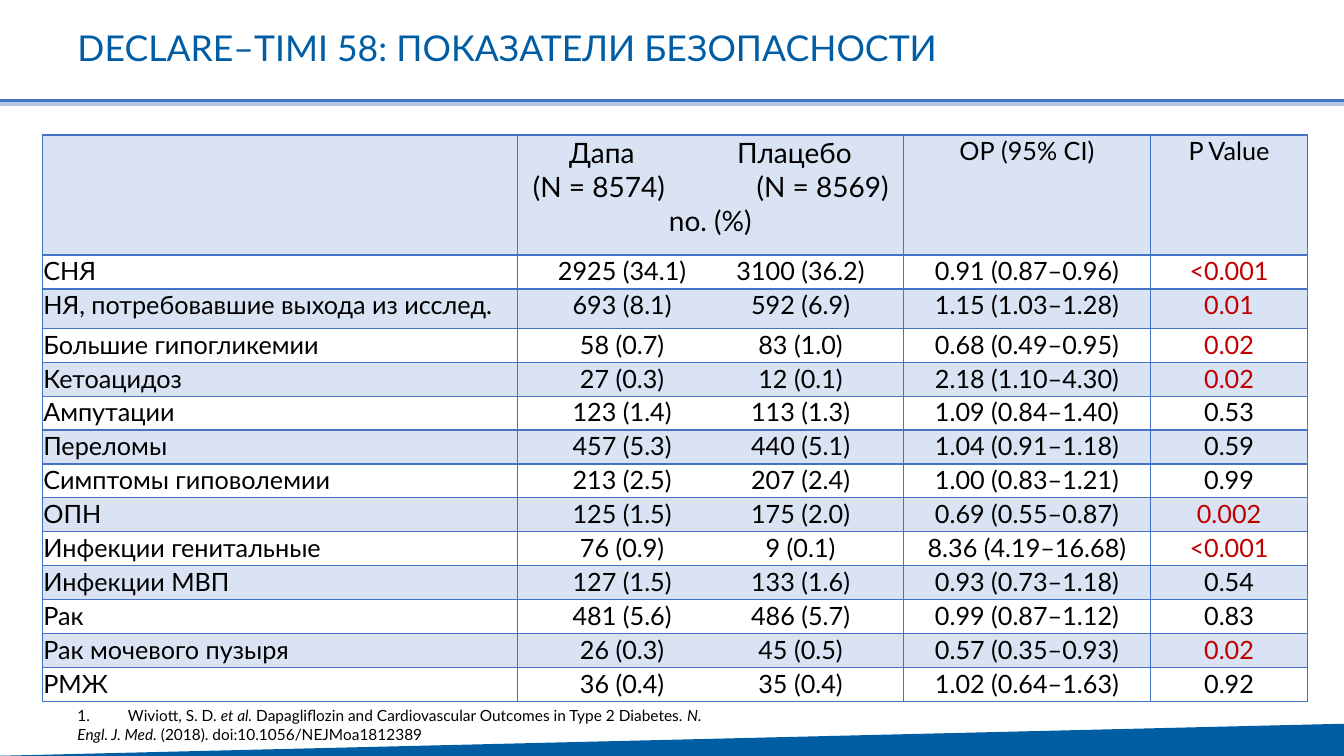
from dataclasses import dataclass

from lxml import etree
from pptx import Presentation
from pptx.dml.color import RGBColor
from pptx.enum.shapes import MSO_CONNECTOR
from pptx.enum.text import MSO_ANCHOR, PP_ALIGN
from pptx.oxml.ns import qn
from pptx.util import Inches, Pt

STRAIGHT = MSO_CONNECTOR.STRAIGHT
MIDDLE, TOP = MSO_ANCHOR.MIDDLE, MSO_ANCHOR.TOP
LEFT, CENTER = PP_ALIGN.LEFT, PP_ALIGN.CENTER


@dataclass(frozen=True)
class Theme:
    font: str = "Lato"
    brand: str = "005DA4"
    rule: str = "4472C4"
    rule_light: str = "B4C7E7"
    band: str = "DAE3F3"
    text: str = "000000"
    significant: str = "C00000"
    title_size: float = 25.4
    header_size: int = 20
    body_size: int = 18
    note_size: int = 11


THEME = Theme()
SLIDE_WIDTH, SLIDE_HEIGHT = 13.33, 7.5

COLUMN_WIDTHS = [4.71, 3.83, 2.45, 1.56]
TABLE_LEFT, TABLE_TOP, TABLE_HEIGHT = 0.42, 1.34, 5.62
HEADER_HEIGHT, WITHDRAWAL_HEIGHT = 1.19, 0.39
WITHDRAWAL_ROW = 2
HEADER_TABS = [(0.83, 2.74), (0.8, 3.02), ()]
VALUE_TABS = (1.03, 2.8)

HEADER = ["", "\tДапа\tПлацебо\n\t(N = 8574)\t(N = 8569)\nno. (%)",
          "ОР (95% CI)", "P Value"]
# Outcome, dapagliflozin, placebo, relative risk, P value, significant
OUTCOMES = [
    ("СНЯ", "2925 (34.1)", "3100 (36.2)", "0.91 (0.87–0.96)", "<0.001", True),
    ("НЯ, потребовавшие выхода из исслед.", "693 (8.1)", "592 (6.9)",
     "1.15 (1.03–1.28)", "0.01", True),
    ("Большие гипогликемии", "58 (0.7)", "83 (1.0)", "0.68 (0.49–0.95)", "0.02", True),
    ("Кетоацидоз", "27 (0.3)", "12 (0.1)", "2.18 (1.10–4.30)", "0.02", True),
    ("Ампутации", "123 (1.4)", "113 (1.3)", "1.09 (0.84–1.40)", "0.53", False),
    ("Переломы", "457 (5.3)", "440 (5.1)", "1.04 (0.91–1.18)", "0.59", False),
    ("Симптомы гиповолемии", "213 (2.5)", "207 (2.4)", "1.00 (0.83–1.21)", "0.99", False),
    ("ОПН", "125 (1.5)", "175 (2.0)", "0.69 (0.55–0.87)", "0.002", True),
    ("Инфекции генитальные", "76 (0.9)", "9 (0.1)", "8.36 (4.19–16.68)", "<0.001", True),
    ("Инфекции МВП", "127 (1.5)", "133 (1.6)", "0.93 (0.73–1.18)", "0.54", False),
    ("Рак", "481 (5.6)", "486 (5.7)", "0.99 (0.87–1.12)", "0.83", False),
    ("Рак мочевого пузыря", "26 (0.3)", "45 (0.5)", "0.57 (0.35–0.93)", "0.02", True),
    ("РМЖ", "36 (0.4)", "35 (0.4)", "1.02 (0.64–1.63)", "0.92", False),
]
CITATION = [
    ("1.\tWiviott, S. D. ", False),
    ("et al.", True),
    (" Dapagliflozin and Cardiovascular Outcomes in Type 2 Diabetes. ", False),
    ("N. Engl. J. Med.", True),
    (" (2018). doi:10.1056/NEJMoa1812389", False),
]


def rgb(value):
    return RGBColor.from_string(value)


def style_run(run, size, color=THEME.text, italic=False):
    run.font.name = THEME.font
    run.font.size = Pt(size)
    run.font.color.rgb = rgb(color)
    run.font.italic = italic


def add_rule(slide, y, color):
    rule = slide.shapes.add_connector(
        STRAIGHT, Inches(0), Inches(y), Inches(SLIDE_WIDTH), Inches(y))
    rule.line.color.rgb = rgb(color)
    rule.line.width = Pt(3)
    etree.SubElement(rule._element.spPr, qn("a:effectLst"))


def add_footer_wedge(slide):
    outline = slide.shapes.build_freeform(Inches(SLIDE_WIDTH), Inches(7.18))
    outline.add_line_segments([
        (Inches(-0.1), Inches(SLIDE_HEIGHT)),
        (Inches(SLIDE_WIDTH), Inches(SLIDE_HEIGHT)),
    ], close=True)
    wedge = outline.convert_to_shape()
    wedge.shadow.inherit = False
    wedge.fill.solid()
    wedge.fill.fore_color.rgb = rgb(THEME.brand)
    wedge.line.fill.background()


def add_text(slide, box, pieces, size, color=THEME.text, anchor=TOP, spacing=None):
    """Add one paragraph made of (text, italic) pieces."""
    frame = slide.shapes.add_textbox(*map(Inches, box)).text_frame
    frame.word_wrap = True
    frame.vertical_anchor = anchor
    paragraph = frame.paragraphs[0]
    paragraph.line_spacing = spacing
    for text, italic in pieces:
        run = paragraph.add_run()
        run.text = text
        style_run(run, size, color, italic)


def set_center_tabs(paragraph, positions):
    tab_list = etree.SubElement(paragraph._p.get_or_add_pPr(), qn("a:tabLst"))
    for position in positions:
        etree.SubElement(tab_list, qn("a:tab"), pos=str(Inches(position)), algn="ctr")


def set_borders(cell):
    properties = cell._tc.get_or_add_tcPr()
    for side in ("a:lnL", "a:lnR", "a:lnT", "a:lnB"):
        border = etree.SubElement(properties, qn(side), w=str(Pt(1)))
        fill = etree.SubElement(border, qn("a:solidFill"))
        etree.SubElement(fill, qn("a:srgbClr"), val=THEME.rule)


def fill_cell(cell, text, banded, align=CENTER, size=THEME.body_size,
              color=THEME.text, tabs=()):
    """Write a cell; tabs holds the centred tab stops of each paragraph."""
    set_borders(cell)
    if banded:
        cell.fill.solid()
        cell.fill.fore_color.rgb = rgb(THEME.band)
    else:
        cell.fill.background()
    cell.margin_left = cell.margin_right = cell.margin_top = Inches(0.01)
    cell.margin_bottom = Inches(0)
    cell.text_frame.text = text
    for index, paragraph in enumerate(cell.text_frame.paragraphs):
        stops = tabs[index] if tabs else ()
        paragraph.alignment = LEFT if stops else align
        if stops:
            set_center_tabs(paragraph, stops)
        for run in paragraph.runs:
            style_run(run, size, color)


def add_safety_table(slide):
    row_count = len(OUTCOMES) + 1
    table = slide.shapes.add_table(
        row_count, len(COLUMN_WIDTHS), Inches(TABLE_LEFT), Inches(TABLE_TOP),
        Inches(sum(COLUMN_WIDTHS)), Inches(TABLE_HEIGHT)).table
    table.first_row = table.horz_banding = False
    for column, width in zip(table.columns, COLUMN_WIDTHS):
        column.width = Inches(width)
    special_heights = {0: HEADER_HEIGHT, WITHDRAWAL_ROW: WITHDRAWAL_HEIGHT}
    regular_height = ((TABLE_HEIGHT - sum(special_heights.values()))
                      / (row_count - len(special_heights)))
    for index, row in enumerate(table.rows):
        row.height = Inches(special_heights.get(index, regular_height))

    for column, heading in enumerate(HEADER):
        arms = column == 1
        fill_cell(table.cell(0, column), heading, True,
                  size=THEME.header_size if arms else THEME.body_size,
                  tabs=HEADER_TABS if arms else ())
    for row, (outcome, dapa, placebo, risk, p_value, significant) in enumerate(OUTCOMES, 1):
        banded = row % 2 == 0
        fill_cell(table.cell(row, 0), outcome, banded, LEFT)
        fill_cell(table.cell(row, 1), f"\t{dapa}\t{placebo}", banded, tabs=[VALUE_TABS])
        fill_cell(table.cell(row, 2), risk, banded)
        fill_cell(table.cell(row, 3), p_value, banded,
                  color=THEME.significant if significant else THEME.text)


def main():
    deck = Presentation()
    deck.slide_width, deck.slide_height = Inches(SLIDE_WIDTH), Inches(SLIDE_HEIGHT)
    slide = deck.slides.add_slide(deck.slide_layouts[6])
    add_footer_wedge(slide)
    add_rule(slide, 1, THEME.rule)
    add_rule(slide, 1.03, THEME.rule_light)
    add_text(slide, (0.67, 0.07, 10.92, 0.85),
             [("DECLARE–TIMI 58: ПОКАЗАТЕЛИ БЕЗОПАСНОСТИ", False)],
             THEME.title_size, THEME.brand, MIDDLE, 0.9)
    add_safety_table(slide)
    add_text(slide, (0.67, 6.96, 6.67, 0.47), CITATION, THEME.note_size)
    deck.save("out.pptx")


if __name__ == "__main__":
    main()
